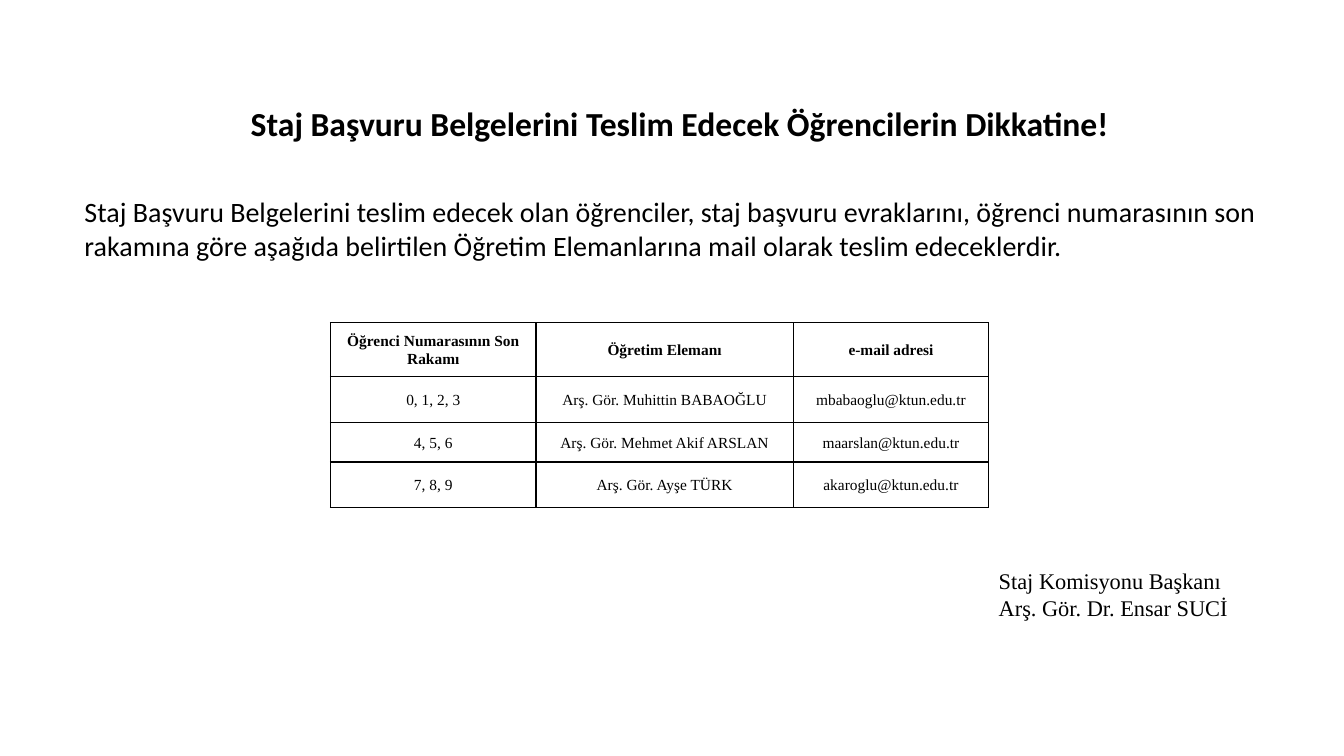
"""Build the internship application notice slide."""
import pptx
import pptx.dml.color
import pptx.enum.text
import pptx.oxml
import pptx.oxml.ns
import pptx.util

Cm, Pt = pptx.util.Cm, pptx.util.Pt
BLACK = pptx.dml.color.RGBColor(0, 0, 0)
WHITE = pptx.dml.color.RGBColor(255, 255, 255)
AUTO_SIZE = pptx.enum.text.MSO_AUTO_SIZE.SHAPE_TO_FIT_TEXT
MIDDLE = pptx.enum.text.MSO_ANCHOR.MIDDLE
CENTER = pptx.enum.text.PP_ALIGN.CENTER


def set_attrs(obj, values):
    for name, value in values.items():
        setattr(obj, name, value)


def add_run(p, text, font):
    r = p.add_run()
    r.text = text
    set_attrs(r.font, font)
    r.font.color.rgb = BLACK


prs = pptx.Presentation()
set_attrs(prs, {"slide_width": Cm(33.87), "slide_height": Cm(19.05)})
s = prs.slides.add_slide(prs.slide_layouts[6])
s.background.fill.solid()
s.background.fill.fore_color.rgb = WHITE

text_boxes = [
    ((1.88, 4.78, 30.76, 1.96), True, {"name": "Calibri", "size": Pt(20)},
     ["Staj Başvuru Belgelerini teslim edecek olan öğrenciler, staj başvuru "
      "evraklarını, öğrenci numarasının son rakamına göre aşağıda belirtilen "
      "Öğretim Elemanlarına mail olarak teslim edeceklerdir."]),
    ((6.07, 2.46, 22.35, 2.31), False,
     {"name": "Calibri", "size": Pt(24), "bold": True},
     ["Staj Başvuru Belgelerini Teslim Edecek Öğrencilerin Dikkatine!"]),
    ((24.92, 14.17, 7.24, 1.63), True,
     {"name": "Times New Roman", "size": Pt(16)},
     ["Staj Komisyonu Başkanı", "Arş. Gör. Dr. Ensar SUCİ"]),
]
for box, wrap, font, lines in text_boxes:
    tf = s.shapes.add_textbox(*map(Cm, box)).text_frame
    set_attrs(tf, {"word_wrap": wrap, "auto_size": AUTO_SIZE})
    for i, line in enumerate(lines):
        p = tf.paragraphs[0] if i == 0 else tf.add_paragraph()
        add_run(p, line, font)

rows = [
    ("Öğrenci Numarasının Son Rakamı", "Öğretim Elemanı", "e-mail adresi"),
    ("0, 1, 2, 3", "Arş. Gör. Muhittin BABAOĞLU", "mbabaoglu@ktun.edu.tr"),
    ("4, 5, 6", "Arş. Gör. Mehmet Akif ARSLAN", "maarslan@ktun.edu.tr"),
    ("7, 8, 9", "Arş. Gör. Ayşe TÜRK", "akaroglu@ktun.edu.tr"),
]
col_widths = [5.18, 6.48, 4.93]
row_heights = [1.35, 1.17, 0.99, 1.14]
cell_format = {"vertical_anchor": MIDDLE, "margin_left": Cm(0.18),
               "margin_right": Cm(0.18), "margin_top": 0, "margin_bottom": 0}
paragraph_format = {"alignment": CENTER, "line_spacing": 1.07,
                    "space_after": Pt(8)}

table = s.shapes.add_table(len(rows), len(col_widths), Cm(8.33), Cm(8.13),
                           Cm(sum(col_widths)), Cm(sum(row_heights))).table
set_attrs(table, {"first_row": False, "horz_banding": False})
for col, width in zip(table.columns, col_widths):
    col.width = Cm(width)
for row, height in zip(table.rows, row_heights):
    row.height = Cm(height)

for i, texts in enumerate(rows):
    for j, text in enumerate(texts):
        cell = table.cell(i, j)
        set_attrs(cell, cell_format)
        for side in "LRTB":
            cell._tc.get_or_add_tcPr().append(pptx.oxml.parse_xml(
                f'<a:ln{side} {pptx.oxml.ns.nsdecls("a")} w="12700"><a:solidFill>'
                f'<a:srgbClr val="{BLACK}"/></a:solidFill></a:ln{side}>'))
        cell.fill.background()
        p = cell.text_frame.paragraphs[0]
        set_attrs(p, paragraph_format)
        add_run(p, text, {"name": "Times New Roman", "size": Pt(11),
                          "bold": i == 0})

prs.save("out.pptx")
